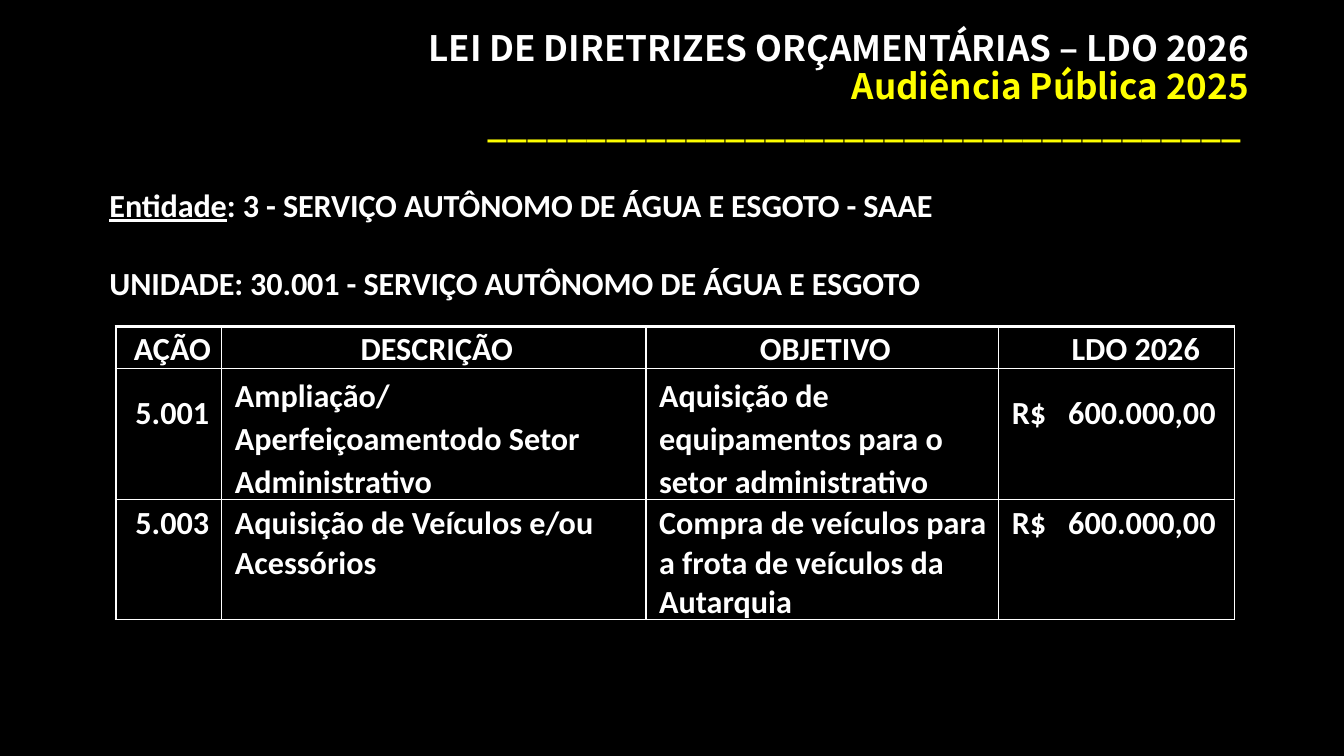
from lxml.etree import SubElement
from pptx import Presentation
from pptx.dml.color import RGBColor
from pptx.enum.text import MSO_ANCHOR as Anchor, MSO_AUTO_SIZE as AutoSize, PP_ALIGN as Align
from pptx.oxml.ns import qn
from pptx.util import Cm, Pt

BLACK = RGBColor(0x00, 0x00, 0x00)
WHITE = RGBColor(0xFF, 0xFF, 0xFF)
YELLOW = RGBColor(0xFF, 0xFF, 0x00)
TITLE_FONT, BODY_FONT = "Noto Sans CJK JP", "Calibri"
TITLE_SIZE, BODY_SIZE = 25, 23
THIN, THICK = 1, 2.25

TITLE_LINES = [
    ("LEI DE DIRETRIZES ORÇAMENTÁRIAS – LDO 2026", WHITE),
    ("Audiência Pública 2025", YELLOW),
    ("_" * 38 + " ", YELLOW),
]
ENTITY_LINES = [
    [("Entidade", True), (": 3 - SERVIÇO AUTÔNOMO DE ÁGUA E ESGOTO - SAAE", False)],
    [("UNIDADE: 30.001 - SERVIÇO AUTÔNOMO DE ÁGUA E ESGOTO", False)],
]
COLUMN_WIDTHS = [2.67, 10.69, 8.89, 5.94]
ROW_HEIGHTS = [1.04, 3.3, 3.02]
ACTIONS = [
    ["AÇÃO", "DESCRIÇÃO", "OBJETIVO", "LDO 2026"],
    ["5.001", "Ampliação/Aperfeiçoamentodo Setor Administrativo",
     "Aquisição de equipamentos para o setor administrativo", "R$\t600.000,00"],
    ["5.003", "Aquisição de Veículos e/ou Acessórios",
     "Compra de veículos para a frota de veículos da Autarquia", "R$\t600.000,00"],
]
HEADER_INDENTS = [0.18, 0.15, 0.15, 0.97]
BODY_INDENTS = [0.18, 0.33, 0.33, 0.33]
# Top margins of the narrow outer columns and of the wrapped inner columns, by row
OUTER_TOPS = [0.08, 0.64, 0.1]
INNER_TOPS = [0.08, 0.13, 0.1]
AMOUNT_TAB = 1.42


class BudgetSlide:
    def __init__(self, deck):
        self.page = deck.slides.add_slide(deck.slide_layouts[5])
        fill = self.page.background.fill
        fill.solid()
        fill.fore_color.rgb = BLACK

    def add_span(self, para, text, font=BODY_FONT, size=BODY_SIZE, color=WHITE,
                 underline=False, tracking=0):
        """Add one bold run; tracking is in points."""
        span = para.add_run()
        span.text = text
        span.font.name, span.font.size = font, Pt(size)
        span.font.bold, span.font.underline = True, underline
        span.font.color.rgb = color
        if tracking:
            span.font._element.set("spc", str(round(tracking * 100)))

    def add_title(self, lines, left, top, width, height):
        title = self.page.shapes.title
        title.left, title.top, title.width, title.height = map(Cm, (left, top, width, height))
        frame = title.text_frame
        frame.auto_size, frame.word_wrap = AutoSize.NONE, True
        frame.vertical_anchor = Anchor.MIDDLE
        frame.margin_bottom = Cm(1.09)
        para = frame.paragraphs[0]
        para.alignment, para.line_spacing = Align.RIGHT, 0.9
        for index, (text, color) in enumerate(lines):
            if index:
                para.add_line_break()
            self.add_span(para, text, TITLE_FONT, TITLE_SIZE, color)

    def add_text(self, lines, left, top, width, height, gap):
        box = self.page.shapes.add_textbox(*map(Cm, (left, top, width, height)))
        frame = box.text_frame
        frame.word_wrap = True
        for index, spans in enumerate(lines):
            para = frame.add_paragraph() if index else frame.paragraphs[0]
            if index:
                para.space_before = Pt(gap)
            for text, underline in spans:
                self.add_span(para, text, underline=underline, tracking=-0.1)

    def add_table(self, rows, left, top):
        size = sum(COLUMN_WIDTHS), sum(ROW_HEIGHTS)
        table = self.page.shapes.add_table(
            len(rows), len(COLUMN_WIDTHS), *map(Cm, (left, top, *size))).table
        table.first_row = table.horz_banding = False
        for column, width in zip(table.columns, COLUMN_WIDTHS):
            column.width = Cm(width)
        for row, height in zip(table.rows, ROW_HEIGHTS):
            row.height = Cm(height)
        for r, texts in enumerate(rows):
            for c, text in enumerate(texts):
                self.fill_cell(table.cell(r, c), text, r, c)

    def fill_cell(self, cell, text, r, c):
        self.draw_borders(cell, r, c)
        cell.fill.background()
        inner = c in (1, 2)
        cell.margin_left = Cm((BODY_INDENTS if r else HEADER_INDENTS)[c])
        cell.margin_top = Cm((INNER_TOPS if inner else OUTER_TOPS)[r])
        cell.margin_right = cell.margin_bottom = 0
        para = cell.text_frame.paragraphs[0]
        para.alignment = Align.CENTER if r == 0 or c == 0 else Align.LEFT
        if r == 1 and inner:
            para.line_spacing = 1.09
        if "\t" in text:
            tabs = SubElement(para._p.get_or_add_pPr(), qn("a:tabLst"))
            SubElement(tabs, qn("a:tab"), pos=str(Cm(AMOUNT_TAB)), algn="l")
        self.add_span(para, text)

    def draw_borders(self, cell, r, c):
        """Rule all four sides, thicker on the table's left and top edges."""
        widths = {"a:lnL": THIN if c else THICK, "a:lnR": THIN,
                  "a:lnT": THIN if r else THICK, "a:lnB": THIN}
        for tag, width in widths.items():
            line = SubElement(cell._tc.get_or_add_tcPr(), qn(tag), w=str(Pt(width)))
            SubElement(SubElement(line, qn("a:solidFill")), qn("a:srgbClr"), val=str(WHITE))


def main():
    deck = Presentation()
    deck.slide_width, deck.slide_height = Cm(33.87), Cm(19.05)
    slide = BudgetSlide(deck)
    slide.add_title(TITLE_LINES, 2.51, 0.86, 29.21, 3.68)
    slide.add_text(ENTITY_LINES, 2.51, 4.55, 26.62, 3.2, gap=28)
    slide.add_table(ACTIONS, 2.92, 8.23)
    deck.save("out.pptx")


if __name__ == "__main__":
    main()
